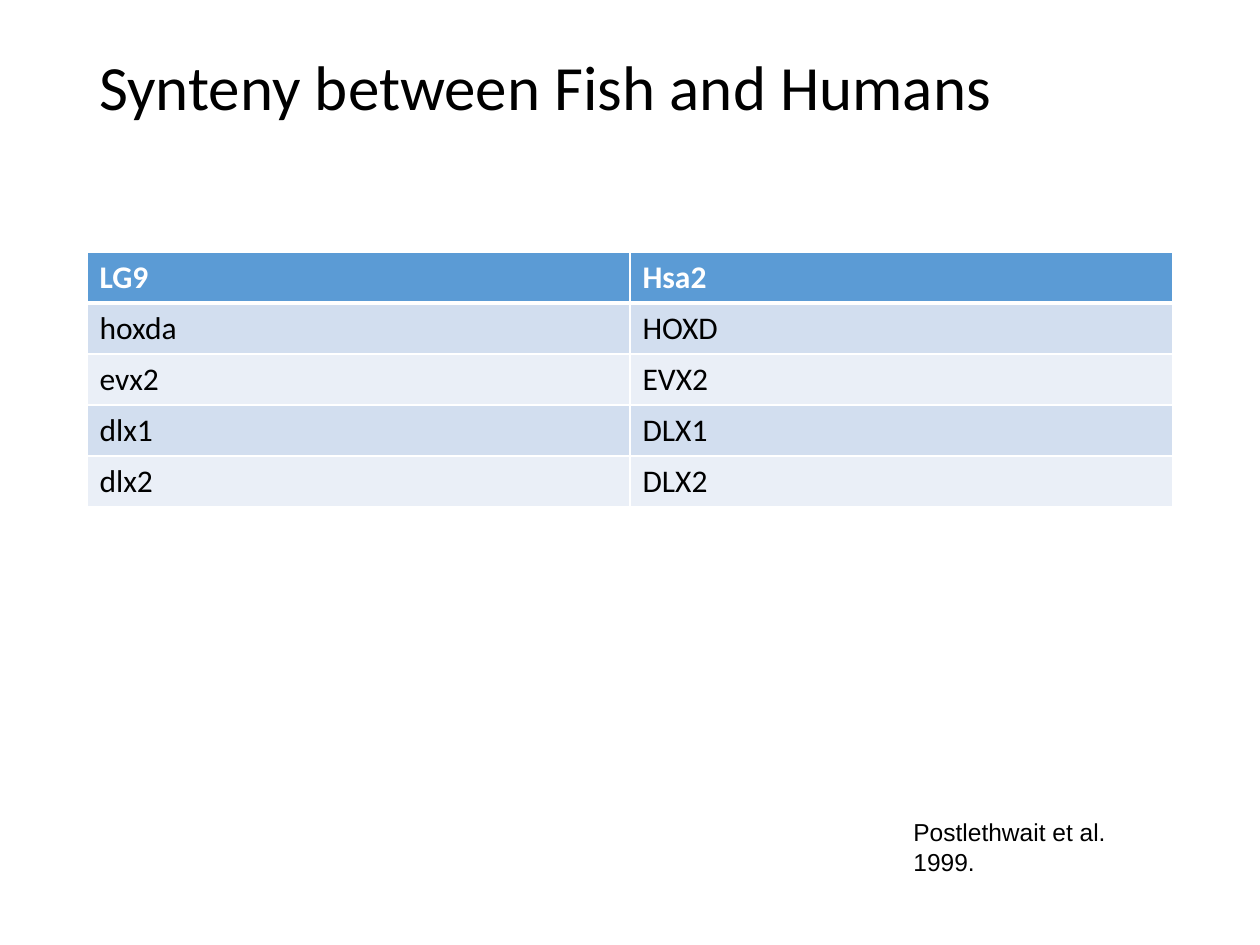
from lxml import etree
from pptx import Presentation
from pptx.dml.color import RGBColor
from pptx.enum import text
from pptx.oxml import ns
from pptx import util as u

PIXEL = u.Inches(1) / 126
BLACK = RGBColor(0x00, 0x00, 0x00)
WHITE = RGBColor(0xFF, 0xFF, 0xFF)
HEADER_BLUE = RGBColor(0x5B, 0x9B, 0xD5)
BAND_FILLS = [RGBColor(0xEA, 0xEF, 0xF7), RGBColor(0xD2, 0xDE, 0xEF)]
GENES = [("LG9", "Hsa2"), ("hoxda", "HOXD"), ("evx2", "EVX2"),
         ("dlx1", "DLX1"), ("dlx2", "DLX2")]
TABLE_WIDTH, ROW_HEIGHT = 1086, 51


def write(frame, words, color, **font):
    """Put one formatted run into a text frame."""
    span = frame.paragraphs[0].add_run()
    span.text = words
    for name, value in font.items():
        setattr(span.font, name, value)
    span.font.color.rgb = color


def add_border(cell, index, side, points):
    """Give one side of a cell a white line."""
    line = etree.Element(ns.qn("a:" + side), w=str(u.Pt(points)))
    fill = etree.SubElement(line, ns.qn("a:solidFill"))
    etree.SubElement(fill, ns.qn("a:srgbClr"), val=str(WHITE))
    cell._tc.get_or_add_tcPr().insert(index, line)


deck = Presentation()
deck.slide_width, deck.slide_height = u.Inches(10), u.Inches(7.5)
page = deck.slides.add_slide(deck.slide_layouts[6])

labels = [
    ("Synteny between Fish and Humans", (87, 50, 1086, 183), 0.9,
     {"name": "Calibri", "size": u.Pt(36)}),
    ("Postlethwait et al. 1999.", (901, 811, 284, 42), 1.0,
     {"name": "Arial", "size": u.Pt(14)}),
]
for words, place, spacing, font in labels:
    box = page.shapes.add_textbox(*[round(n * PIXEL) for n in place])
    frame = box.text_frame
    frame.word_wrap = True
    frame.vertical_anchor = text.MSO_ANCHOR.TOP
    frame.paragraphs[0].line_spacing = spacing
    write(frame, words, BLACK, **font)

place = (87, 252, TABLE_WIDTH, ROW_HEIGHT * len(GENES))
table = page.shapes.add_table(
    len(GENES), 2, *[round(n * PIXEL) for n in place]).table
for row, names in enumerate(GENES):
    header = row == 0
    for column, name in enumerate(names):
        cell = table.cell(row, column)
        write(cell.text_frame, name, WHITE if header else BLACK,
              name="Calibri", size=u.Pt(18), bold=header)
        cell.fill.solid()
        cell.fill.fore_color.rgb = HEADER_BLUE if header else BAND_FILLS[row % 2]
        widths = {"lnL": 1, "lnR": 1, "lnT": 3 if row == 1 else 1,
                  "lnB": 3 if header else 1}
        for index, (side, points) in enumerate(widths.items()):
            add_border(cell, index, side, points)

deck.save("out.pptx")
